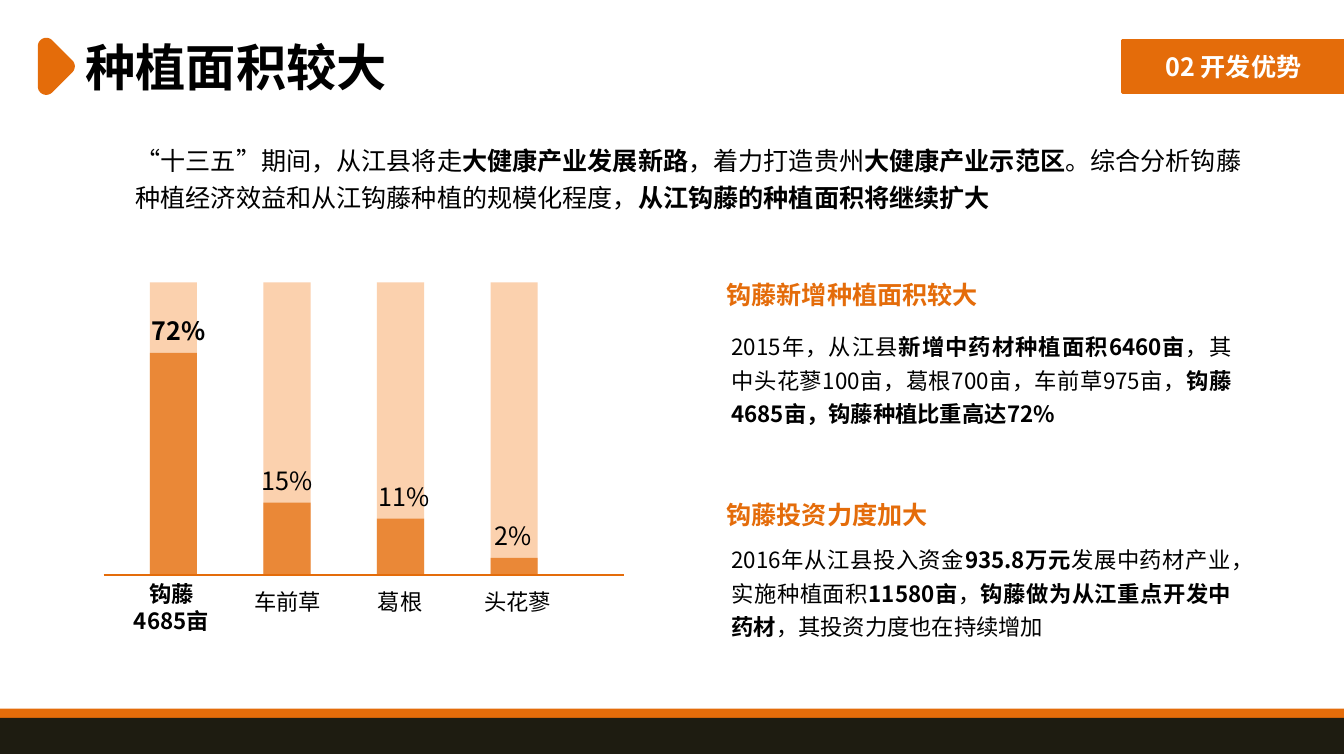
from math import cos, radians, sin

from lxml import etree
from pptx import Presentation
from pptx.dml.color import RGBColor
from pptx.enum.shapes import MSO_CONNECTOR, MSO_SHAPE
from pptx.enum.text import MSO_ANCHOR, MSO_AUTO_SIZE, PP_ALIGN
from pptx.oxml.ns import qn
from pptx.util import Inches, Pt

RECT = MSO_SHAPE.RECTANGLE
STRAIGHT = MSO_CONNECTOR.STRAIGHT
TOP, MIDDLE = MSO_ANCHOR.TOP, MSO_ANCHOR.MIDDLE
LEFT, CENTER, JUSTIFY = PP_ALIGN.LEFT, PP_ALIGN.CENTER, PP_ALIGN.JUSTIFY
FONT = "Noto Sans CJK SC"
COLORS = {"orange": "E46C0A", "peach": "FAC090", "dark": "1E1C11",
          "black": "000000", "white": "FFFFFF"}

BARS = [
    (["钩藤", "4685亩"], "72%", 2.21, 0.19, 0.38, True),
    (["车前草"], "15%", 0.72, 1.4, 1.47, False),
    (["葛根"], "11%", 0.56, 2.63, 2.64, False),
    (["头花蓼"], "2%", 0.17, 3.69, 3.79, False),
]
INTRO = [
    ("“十三五”期间，从江县将走", False), ("大健康产业发展新路", True),
    ("，着力打造贵州", False), ("大健康产业示范区", True),
    ("。综合分析钩藤种植经济效益和从江钩藤种植的规模化程度，", False),
    ("从江钩藤的种植面积将继续扩大", True),
]
AREA = [
    ("2015年，从江县", False), ("新增中药材种植面积6460亩", True),
    ("，其中头花蓼100亩，葛根700亩，车前草975亩，", False),
    ("钩藤4685亩，钩藤种植比重高达72%", True),
]
FUNDING = [
    ("2016年从江县投入资金", False), ("935.8万元", True),
    ("发展中药材产业，实施种植面积", False), ("11580亩", True), ("，", False),
    ("钩藤做为从江重点开发中药材", True), ("，其投资力度也在持续增加", False),
]


def rgb(name):
    return RGBColor.from_string(COLORS[name])


def write(sp, paragraphs, size, color="black", align=LEFT, anchor=TOP, spacing=None):
    tf = sp.text_frame
    tf.word_wrap = True
    tf.auto_size = MSO_AUTO_SIZE.NONE
    tf.vertical_anchor = anchor
    for i, runs in enumerate(paragraphs):
        p = tf.add_paragraph() if i else tf.paragraphs[0]
        p.alignment = align
        if spacing:
            p.line_spacing = spacing
        for text, bold in runs:
            r = p.add_run()
            r.text = text
            r.font.size = Pt(size)
            r.font.bold = bold
            r.font.name = FONT
            r.font.color.rgb = rgb(color)
            etree.SubElement(r.font._element, qn("a:ea"), typeface=FONT)


def add_text(slide, x, y, w, h, paragraphs, size, **style):
    sp = slide.shapes.add_textbox(Inches(x), Inches(y), Inches(w), Inches(h))
    write(sp, paragraphs, size, **style)


def paint(sp, color, alpha=None, line=None):
    sp.shadow.inherit = False
    sp.fill.solid()
    sp.fill.fore_color.rgb = rgb(color)
    if alpha:
        clr = sp.fill._xPr.find(qn("a:solidFill"))[0]
        etree.SubElement(clr, qn("a:alpha"), val=str(alpha * 1000))
    if line:
        sp.line.color.rgb = rgb(color)
        sp.line.width = Pt(line)
    else:
        sp.line.fill.background()


def add_rect(slide, x, y, w, h, color, **style):
    sp = slide.shapes.add_shape(RECT, Inches(x), Inches(y), Inches(w), Inches(h))
    paint(sp, color, **style)
    return sp


def add_pointer(slide, x, y, radius=0.07, reach=0.2):
    corners = [(0, 0, 180), (reach, reach, 315), (0, 2 * reach, 45)]
    sweeps = [135, 90, 135]
    points = []
    for (dx, dy, start), sweep in zip(corners, sweeps):
        for step in range(10):
            a = radians(start + sweep * step / 9)
            points.append((Inches(x + radius + dx + radius * cos(a)),
                           Inches(y + radius + dy + radius * sin(a))))
    fb = slide.shapes.build_freeform(*points[0])
    fb.add_line_segments(points[1:])
    paint(fb.convert_to_shape(), "orange", line=2)


def add_header(slide, x, y):
    add_pointer(slide, x, y)
    title = slide.shapes.title
    title.left, title.top = Inches(x + 0.36), Inches(y - 0.08)
    title.width, title.height = Inches(3.49), Inches(0.71)
    write(title, [[("种植面积较大", True)]], 36, anchor=MIDDLE)
    badge = add_rect(slide, 11.17, y + 0.01, 2.2, 0.52, "orange", line=2)
    write(badge, [[("02 开发优势", True)]], 18, color="white",
          align=CENTER, anchor=MIDDLE)


def add_bars(slide, x, y, w, h):
    bar_w, pitch = 0.47, 1.13
    base = y + h
    for i, (names, value, bar_h, name_x, value_x, bold) in enumerate(BARS):
        bar_x = x + 0.46 + i * pitch
        add_rect(slide, bar_x, y, bar_w, h, "peach", alpha=72)
        add_rect(slide, bar_x, base - bar_h, bar_w, bar_h, "orange", alpha=72)
        single = len(names) == 1
        add_text(slide, x + name_x, base + (0.08 if single else 0), 0.97,
                 0.37 if single else 0.64, [[(n, bold)] for n in names], 16,
                 align=LEFT if single else CENTER)
        add_text(slide, x + value_x, base - bar_h - 0.42, 0.84, 0.4,
                 [[(value, bold)]], 18, anchor=MIDDLE)
    axis = slide.shapes.add_connector(STRAIGHT, Inches(x), Inches(base),
                                      Inches(x + w), Inches(base))
    axis.line.color.rgb = rgb("orange")
    axis.line.width = Pt(1)
    etree.SubElement(axis._element.spPr, qn("a:effectLst"))


def add_point(slide, x, y, heading, runs, gap):
    add_text(slide, x, y, 3.3, 0.4, [[(heading, True)]], 18,
             color="orange", anchor=MIDDLE)
    add_text(slide, x + 0.05, y + gap, 5.17, 1.11, [runs], 16,
             align=JUSTIFY, spacing=Pt(24))


def add_footer(slide, y, w):
    add_rect(slide, 0, y, w, 0.36, "orange")
    add_rect(slide, 0, y + 0.09, w, 0.36, "dark")


def main():
    prs = Presentation()
    prs.slide_width, prs.slide_height = Inches(13.37), Inches(7.5)
    slide = prs.slides.add_slide(prs.slide_layouts[5])
    add_header(slide, 0.39, 0.39)
    add_text(slide, 1.25, 1.34, 11.34, 0.83, [INTRO], 18, spacing=Pt(26))
    add_bars(slide, 1.03, 2.81, 5.18, 2.91)
    add_point(slide, 7.13, 2.73, "钩藤新增种植面积较大", AREA, 0.47)
    add_point(slide, 7.13, 4.92, "钩藤投资力度加大", FUNDING, 0.4)
    add_footer(slide, 7.05, 13.37)
    prs.save("out.pptx")


if __name__ == "__main__":
    main()
